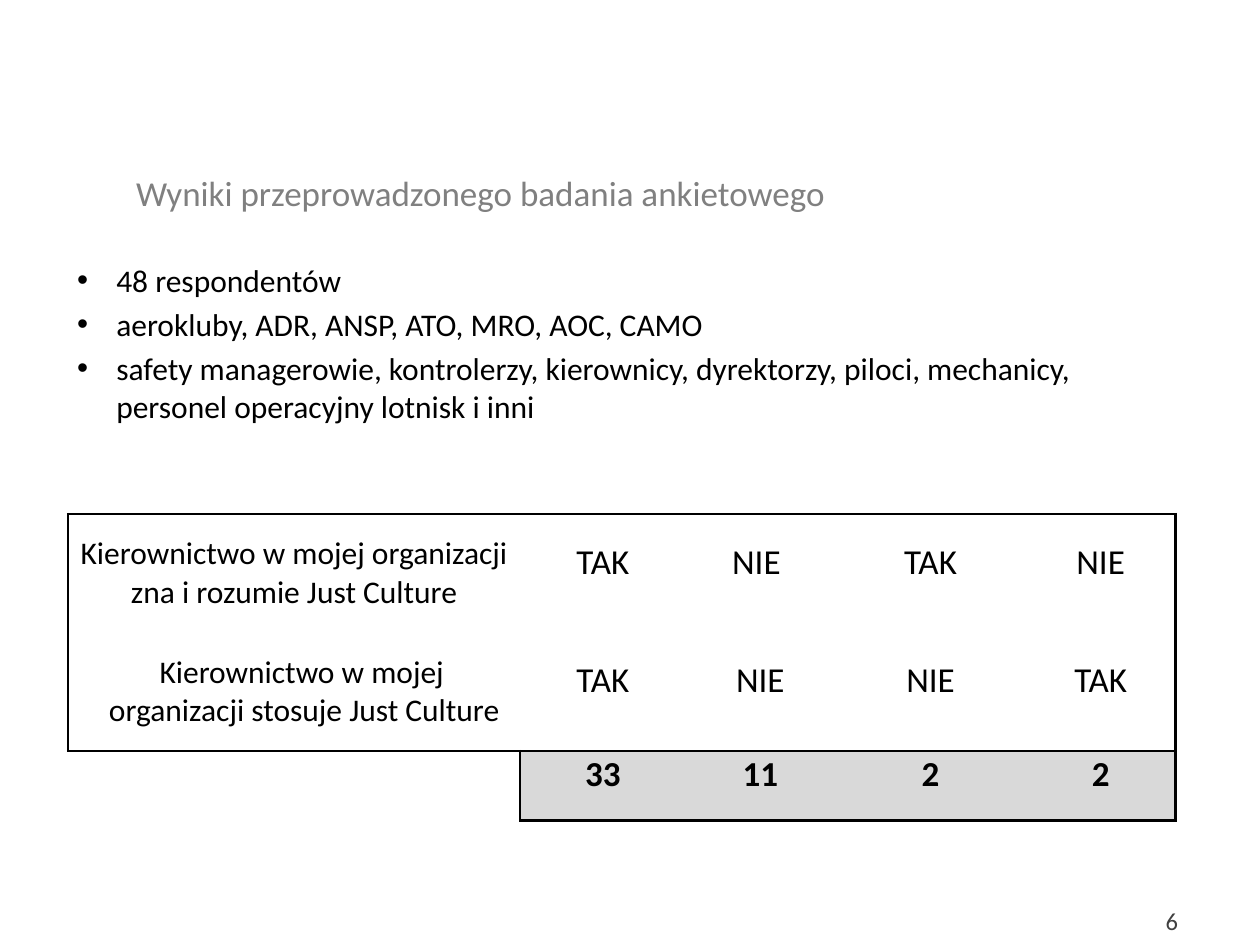
from dataclasses import dataclass

from lxml.etree import SubElement
from pptx import Presentation
from pptx.dml.color import RGBColor
from pptx.enum.text import MSO_ANCHOR, MSO_AUTO_SIZE, PP_ALIGN
from pptx.oxml.ns import qn
from pptx.util import Cm, Pt


@dataclass(frozen=True)
class Theme:
    font: str = "Calibri"
    ink: str = "000000"
    heading: str = "808080"
    page: str = "404040"
    total_fill: str = "D9D9D9"
    large: int = 20
    normal: int = 18
    small: int = 14
    border: float = 1.5


@dataclass(frozen=True)
class Box:
    left: float
    top: float
    width: float
    height: float


@dataclass(frozen=True)
class Entry:
    text: str
    region: str
    size: int
    left: float = 0
    first: float = 0.41
    line: float | None = 12
    bold: bool = False


THEME = Theme()
EMPTY, ANSWERS, TOTALS = "empty", "answers", "totals"
COLUMN_WIDTHS = [9.12, 2.92, 3.43, 3.43, 3.43]
ROW_HEIGHTS = [2.39, 2.39, 1.4]
EDGES = {"a:lnL": (0, -1), "a:lnR": (0, 1), "a:lnT": (-1, 0), "a:lnB": (1, 0)}
GROUPS = [
    "48 respondentów",
    "aerokluby, ADR, ANSP, ATO, MRO, AOC, CAMO",
    "safety managerowie, kontrolerzy, kierownicy, dyrektorzy, piloci, mechanicy, "
    "personel operacyjny lotnisk i inni",
]


def question(text: str, left: float = 0, first: float = 0) -> Entry:
    return Entry(text, ANSWERS, THEME.normal, left, first, None)


def answers(*texts: str) -> list[Entry]:
    return [Entry(text, ANSWERS, THEME.large) for text in texts]


def totals(*texts: str) -> list[Entry]:
    return [Entry(text, TOTALS, THEME.large, bold=True) for text in texts]


SURVEY = [
    [question("Kierownictwo w mojej organizacji zna i rozumie Just Culture"),
     *answers("TAK", "NIE ", "TAK", "NIE")],
    [question("Kierownictwo w mojej organizacji stosuje Just Culture", 0.41, -0.1),
     *answers("TAK", "NIE", "NIE", "TAK")],
    [Entry("", EMPTY, THEME.normal), *totals("33", "11", "2", "2")],
]


def place(shape, box: Box) -> None:
    shape.left, shape.top = Cm(box.left), Cm(box.top)
    shape.width, shape.height = Cm(box.width), Cm(box.height)


def style(paragraph, size: int, color: str, align: PP_ALIGN, bold: bool = False) -> None:
    paragraph.alignment = align
    for run in paragraph.runs:
        run.font.name = THEME.font
        run.font.size = Pt(size)
        run.font.bold = bold
        run.font.color.rgb = RGBColor.from_string(color)


def indent(paragraph, left: float, first: float) -> None:
    properties = paragraph._p.get_or_add_pPr()
    properties.set("marL", str(Cm(left)))
    properties.set("indent", str(Cm(first)))


def write(shape, box: Box, text: str, size: int, color: str, align: PP_ALIGN) -> None:
    place(shape, box)
    frame = shape.text_frame
    frame.text = text
    frame.word_wrap = True
    frame.auto_size = MSO_AUTO_SIZE.NONE
    frame.vertical_anchor = MSO_ANCHOR.TOP
    for paragraph in frame.paragraphs:
        style(paragraph, size, color, align)


def region_at(row: int, column: int) -> str:
    inside = 0 <= row < len(SURVEY) and 0 <= column < len(SURVEY[0])
    return SURVEY[row][column].region if inside else EMPTY


def outline(cell, row: int, column: int) -> None:
    properties = cell._tc.get_or_add_tcPr()
    for tag, (down, across) in EDGES.items():
        line = SubElement(properties, qn(tag), w=str(Pt(THEME.border)))
        if region_at(row, column) == region_at(row + down, column + across):
            SubElement(line, qn("a:noFill"))
        else:
            fill = SubElement(line, qn("a:solidFill"))
            SubElement(fill, qn("a:srgbClr"), val=THEME.ink)


def fill_cell(cell, entry: Entry) -> None:
    cell.margin_left = cell.margin_right = Cm(0.18)
    cell.margin_top = cell.margin_bottom = Cm(0)
    cell.vertical_anchor = MSO_ANCHOR.MIDDLE
    if entry.region == TOTALS:
        cell.fill.solid()
        cell.fill.fore_color.rgb = RGBColor.from_string(THEME.total_fill)
    else:
        cell.fill.background()
    if entry.text:
        cell.text_frame.text = entry.text
        paragraph = cell.text_frame.paragraphs[0]
        indent(paragraph, entry.left, entry.first)
        if entry.line:
            paragraph.line_spacing = Pt(entry.line)
        style(paragraph, entry.size, THEME.ink, PP_ALIGN.CENTER, entry.bold)


def add_survey(slide) -> None:
    frame = slide.shapes.add_table(
        len(SURVEY), len(SURVEY[0]), Cm(1.37), Cm(10.36),
        Cm(sum(COLUMN_WIDTHS)), Cm(sum(ROW_HEIGHTS)),
    )
    survey = frame.table
    survey.first_row = survey.horz_banding = False
    for column, width in zip(survey.columns, COLUMN_WIDTHS):
        column.width = Cm(width)
    for row, height in zip(survey.rows, ROW_HEIGHTS):
        row.height = Cm(height)
    for row, entries in enumerate(SURVEY):
        for column, entry in enumerate(entries):
            cell = survey.cell(row, column)
            outline(cell, row, column)
            fill_cell(cell, entry)


def main() -> None:
    deck = Presentation()
    deck.slide_width, deck.slide_height = Cm(25.4), Cm(19.05)
    slide = deck.slides.add_slide(deck.slide_layouts[1])

    respondents = slide.placeholders[1]
    write(respondents, Box(1.3, 5.13, 22.86, 11.02), "\n".join(GROUPS),
          THEME.normal, THEME.ink, PP_ALIGN.LEFT)
    for position, paragraph in enumerate(respondents.text_frame.paragraphs):
        indent(paragraph, 0.79, -0.79)
        paragraph.space_before = Pt(3.6 if position else 0)

    write(slide.shapes.title, Box(2.49, 3.33, 21.26, 0.81),
          "Wyniki przeprowadzonego badania ankietowego",
          THEME.large, THEME.heading, PP_ALIGN.LEFT)

    page_number = slide.shapes.add_textbox(0, 0, 0, 0)
    write(page_number, Box(18.08, 18.14, 5.92, 0.84), "6",
          THEME.small, THEME.page, PP_ALIGN.RIGHT)

    add_survey(slide)
    deck.save("out.pptx")


if __name__ == "__main__":
    main()
